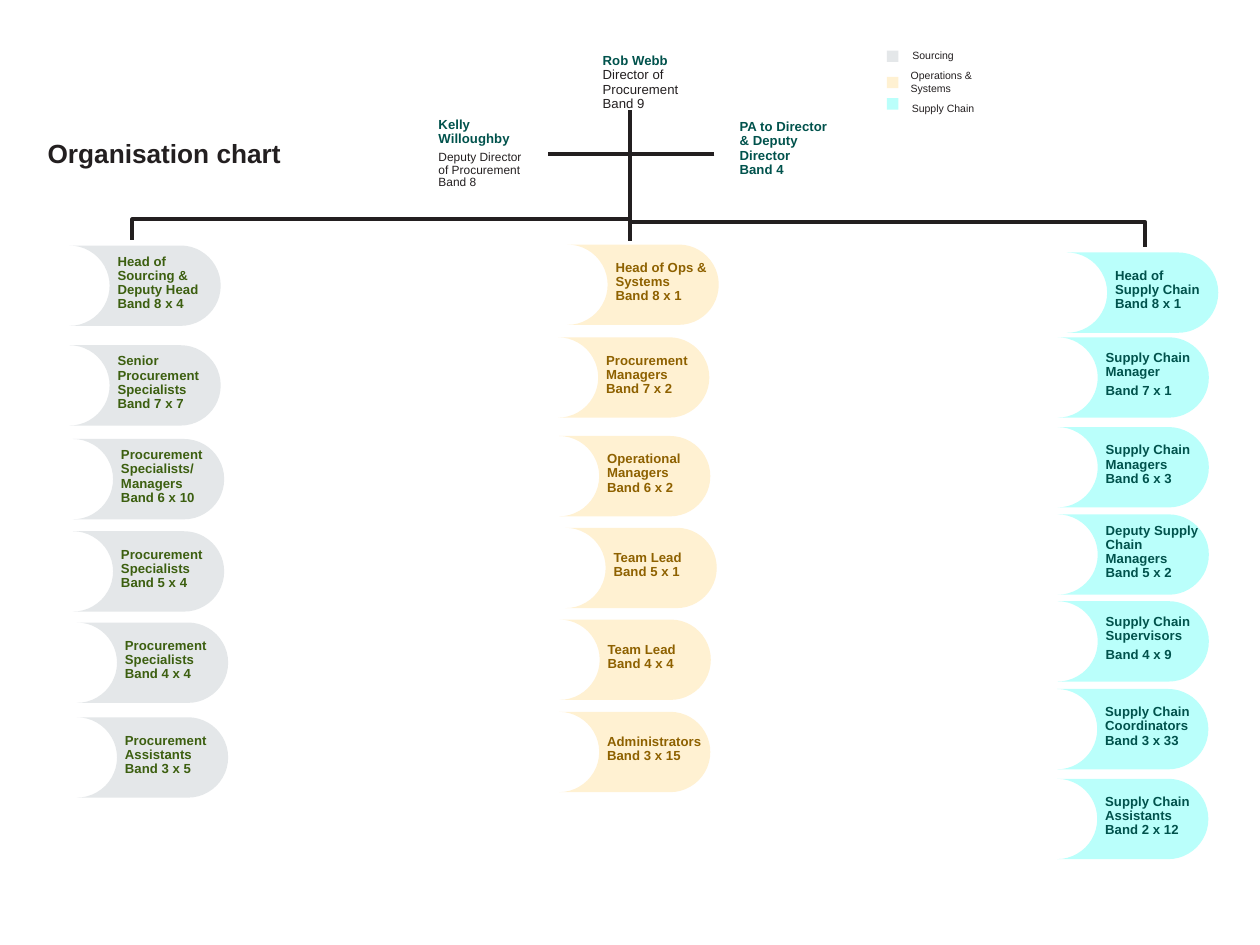
from copy import deepcopy

from lxml import etree
from pptx import Presentation
from pptx.dml.color import RGBColor
from pptx.enum.shapes import MSO_CONNECTOR, MSO_SHAPE
from pptx.enum.text import MSO_ANCHOR, PP_ALIGN
from pptx.oxml.ns import qn
from pptx.util import Cm, Pt

STRAIGHT, ELBOW = MSO_CONNECTOR.STRAIGHT, MSO_CONNECTOR.ELBOW
RECTANGLE = MSO_SHAPE.RECTANGLE
TOP, MIDDLE = MSO_ANCHOR.TOP, MSO_ANCHOR.MIDDLE
LEFT, CENTER = PP_ALIGN.LEFT, PP_ALIGN.CENTER

INK, TEAL, GREEN, BROWN = "231F20", "00524C", "3C5F10", "8E6100"
GREY, CREAM, AQUA = "E4E7E9", "FFF1D2", "BAFFFB"
CARD_WIDTH, CARD_HEIGHT = 3.05, 1.62
CARD_MARGINS = (0.97, 0, 0.18, 0.1)

rgb = RGBColor.from_string


def add_text(paragraph, text, *, color, size=7.5, bold=True, align=LEFT, spacing=0.9, after=2.6):
    paragraph.alignment = align
    paragraph.line_spacing = spacing
    paragraph.space_after = Pt(after)
    for index, line in enumerate(text.split("\n")):
        if index:
            paragraph.add_line_break()
        run = paragraph.add_run()
        run.text = line
        run.font.name = "Arial"
        run.font.size = Pt(size)
        run.font.bold = bold
        run.font.color.rgb = rgb(color)
    # Line breaks take the format of the text around them
    for line_break in paragraph._p.findall(qn("a:br")):
        line_break.append(deepcopy(run._r.rPr))


def prepare_frame(shape, margins=(0, 0, 0, 0), anchor=MIDDLE):
    frame = shape.text_frame
    frame.word_wrap = True
    frame.vertical_anchor = anchor
    frame.margin_left, frame.margin_top, frame.margin_right, frame.margin_bottom = map(Cm, margins)
    return frame


presentation = Presentation()
presentation.slide_width, presentation.slide_height = Cm(25.4), Cm(19.05)
slide = presentation.slides.add_slide(presentation.slide_layouts[6])
shapes = slide.shapes

# Title
title = shapes.add_textbox(Cm(0.71), Cm(2.72), Cm(7.47), Cm(1.02))
frame = prepare_frame(title, (0.25, 0.13, 0.25, 0.13), TOP)
add_text(frame.paragraphs[0], "Organisation chart", color=INK, size=15, after=0)

# Legend: swatch top, fill, label, label box, alignment
legend = [
    (1.02, GREY, "Sourcing", (18.19, 0.84, 1.24, 0.56), CENTER),
    (1.55, CREAM, "Operations & Systems", (18.36, 1.37, 1.3, 0.56), LEFT),
    (1.98, AQUA, "Supply Chain", (18.06, 1.93, 1.9, 0.51), CENTER),
]
for top, fill, label, box, align in legend:
    swatch = shapes.add_shape(RECTANGLE, Cm(17.88), Cm(top), Cm(0.23), Cm(0.23))
    swatch.shadow.inherit = False
    swatch.fill.solid()
    swatch.fill.fore_color.rgb = rgb(fill)
    swatch.line.fill.background()
    frame = prepare_frame(shapes.add_textbox(*map(Cm, box)))
    add_text(frame.paragraphs[0], label, color=INK, size=6, bold=False, align=align, spacing=1, after=2.1)

# Reporting lines
reporting_lines = [
    (ELBOW, 12.7, 4.42, 2.67, 4.83),
    (ELBOW, 12.7, 4.47, 23.08, 4.98),
    (STRAIGHT, 12.7, 4.47, 12.7, 4.85),
    (STRAIGHT, 12.7, 4.47, 12.7, 2.21),
    (STRAIGHT, 12.73, 3.11, 11.05, 3.11),
    (STRAIGHT, 14.4, 3.11, 12.73, 3.11),
]
for kind, *ends in reporting_lines:
    connector = shapes.add_connector(kind, *map(Cm, ends))
    connector.line.color.rgb = rgb(INK)
    connector.line.width = Pt(2.25)
    properties = connector._element.spPr
    etree.SubElement(properties, qn("a:effectLst"))
    if kind == ELBOW:  # turn at the far end
        adjustments = properties.find(qn("a:prstGeom")).get_or_add_avLst()
        etree.SubElement(adjustments, qn("a:gd"), name="adj1", fmla="val 100000")

# Directors: left, top, name, role, role on a new paragraph, role size
directors = [
    (11.18, 0.91, "Rob Webb ", "Director of Procurement Band 9", False, 7.5),
    (7.87, 2.34, "Kelly Willoughby", "Deputy Director of Procurement Band 8", True, 6.8),
    (13.94, 2.24, "PA to Director & Deputy Director\nBand 4", None, False, 7.5),
]
for left, top, name, role, new_paragraph, size in directors:
    box = shapes.add_textbox(Cm(left), Cm(top), Cm(CARD_WIDTH), Cm(CARD_HEIGHT))
    frame = prepare_frame(box, CARD_MARGINS)
    add_text(frame.paragraphs[0], name, color=TEAL)
    if role:
        paragraph = frame.add_paragraph() if new_paragraph else frame.paragraphs[0]
        add_text(paragraph, role, color=INK, size=size, bold=False)

# Teams: fill, text colour, cards of left, top and paragraphs
teams = [
    (GREY, GREEN, [
        (1.4, 4.95, ["Head of Sourcing & Deputy Head\nBand 8 x 4"]),
        (1.4, 6.96, ["Senior Procurement Specialists\nBand 7 x 7"]),
        (1.47, 8.85, ["Procurement Specialists/\nManagers\nBand 6 x 10"]),
        (1.47, 10.71, ["Procurement Specialists\nBand 5 x 4"]),
        (1.55, 12.55, ["Procurement Specialists\nBand 4 x 4"]),
        (1.55, 14.46, ["Procurement Assistants\nBand 3 x 5"]),
    ]),
    (CREAM, BROWN, [
        (11.44, 4.93, ["Head of Ops & Systems\nBand 8 x 1"]),
        (11.25, 6.8, ["Procurement Managers\nBand 7 x 2"]),
        (11.27, 8.79, ["Operational Managers\nBand 6 x 2"]),
        (11.4, 10.64, ["Team Lead\nBand 5 x 1"]),
        (11.28, 12.49, ["Team Lead\nBand 4 x 4"]),
        (11.27, 14.35, ["Administrators\nBand 3 x 15"]),
    ]),
    (AQUA, TEAL, [
        (21.51, 5.09, ["Head of Supply Chain Band 8 x 1"]),
        (21.32, 6.8, ["Supply Chain Manager", "Band 7 x 1"]),
        (21.32, 8.61, ["Supply Chain Managers\nBand 6 x 3"]),
        (21.32, 10.37, ["Deputy Supply Chain Managers\nBand 5 x 2"]),
        (21.32, 12.12, ["Supply Chain Supervisors", "Band 4 x 9"]),
        (21.31, 13.89, ["Supply Chain Coordinators\nBand 3 x 33"]),
        (21.31, 15.7, ["Supply Chain Assistants\nBand 2 x 12"]),
    ]),
]

# Card corners in hundredths of a cm
width, height = round(CARD_WIDTH * 100), round(CARD_HEIGHT * 100)
radius = height // 2
corners = [(width - radius, 0), (width, radius), (width - radius, height), (0, height)]

for fill, color, cards in teams:
    for left, top, texts in cards:
        builder = shapes.build_freeform(0, 0, scale=Cm(0.01))
        builder.add_line_segments(corners, close=True)
        card = builder.convert_to_shape(Cm(left), Cm(top))
        # Round the right end and hollow out the left end
        outline = next(card._element.iter(qn("a:path")))
        start, top_edge, right_tip, right_foot, bottom_edge, close = outline
        right_arc, left_arc = (
            etree.Element(qn("a:arcTo"), wR=str(radius), hR=str(radius), stAng=angle, swAng=sweep)
            for angle, sweep in (("16200000", "10800000"), ("5400000", "-10800000"))
        )
        outline.replace(right_tip, right_arc)
        outline.remove(right_foot)
        close.addprevious(left_arc)
        card.shadow.inherit = False
        card.fill.solid()
        card.fill.fore_color.rgb = rgb(fill)
        card.line.fill.background()
        frame = prepare_frame(card, CARD_MARGINS)
        for index, text in enumerate(texts):
            paragraph = frame.add_paragraph() if index else frame.paragraphs[0]
            add_text(paragraph, text, color=color)

presentation.save("out.pptx")
